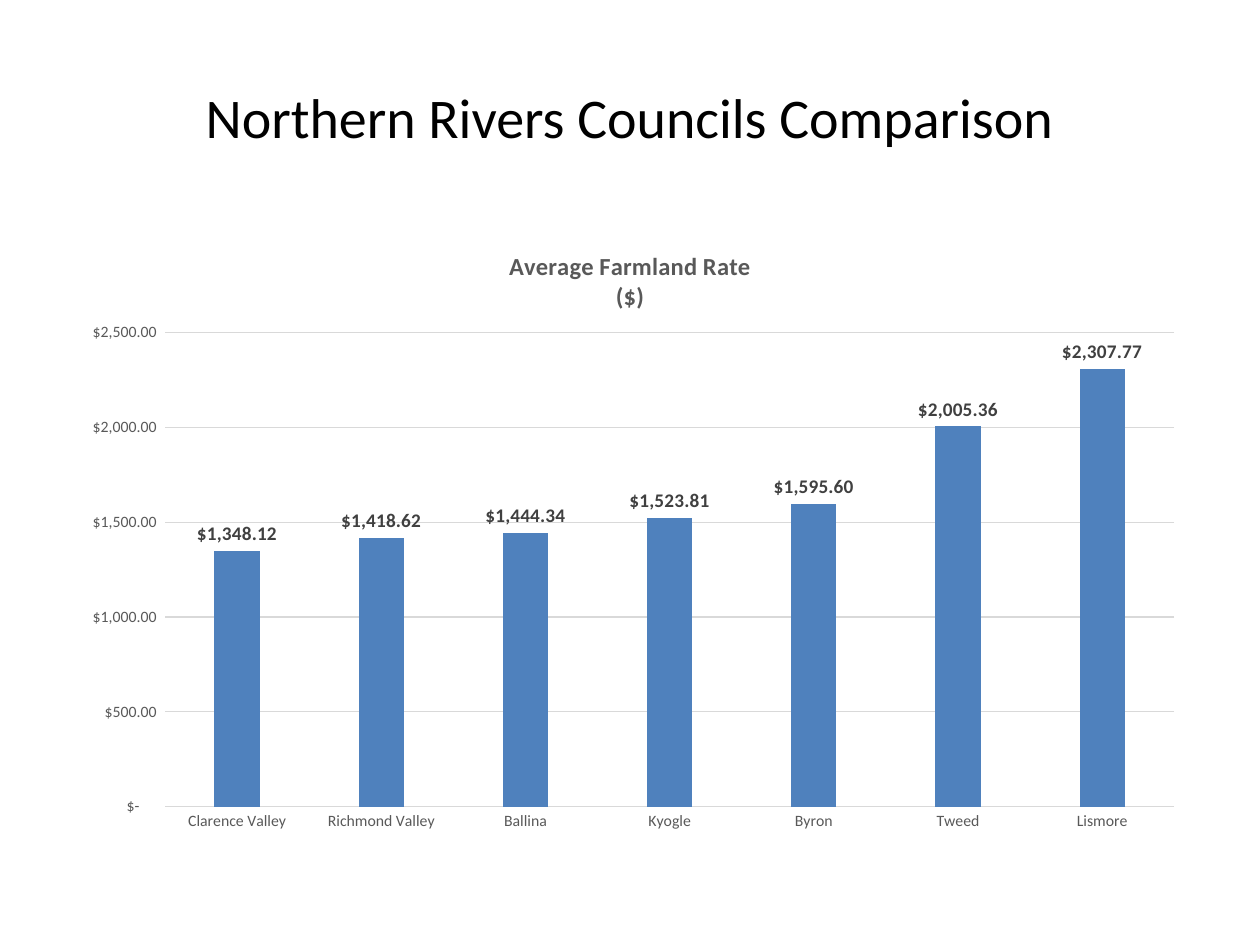
from dataclasses import dataclass

from lxml import etree
from pptx import Presentation
from pptx.chart.data import CategoryChartData
from pptx.dml.color import RGBColor
from pptx.enum.chart import XL_CHART_TYPE, XL_LABEL_POSITION, XL_TICK_MARK
from pptx.enum.text import MSO_ANCHOR, PP_ALIGN
from pptx.oxml.ns import qn
from pptx.util import Pt

COLUMNS = XL_CHART_TYPE.COLUMN_CLUSTERED
OUTSIDE_END = XL_LABEL_POSITION.OUTSIDE_END
NO_TICK = XL_TICK_MARK.NONE
MIDDLE = MSO_ANCHOR.MIDDLE
CENTER = PP_ALIGN.CENTER

ACCOUNTING = r'_("$"* #,##0.00_);_("$"* \(#,##0.00\);_("$"* "-"??_);_(@_)'
AVERAGE_RATES = {
    "Clarence Valley": 1348.12,
    "Richmond Valley": 1418.62,
    "Ballina": 1444.34,
    "Kyogle": 1523.81,
    "Byron": 1595.60,
    "Tweed": 2005.36,
    "Lismore": 2307.77,
}


@dataclass(frozen=True)
class Theme:
    """Typeface, type sizes and colours of the slide."""

    typeface: str = "Calibri"
    heading_size: int = 32
    chart_title_size: int = 14
    label_size: int = 11
    chart_size: int = 10
    axis_size: int = 9
    rule_width: float = 0.75
    black: str = "000000"
    label_ink: str = "404040"
    axis_ink: str = "595959"
    rule: str = "D9D9D9"
    column: str = "4F81BD"


def apply(target, values):
    """Set every attribute named in values on target."""
    for name, value in values.items():
        setattr(target, name, value)


def place(parent, index, **layout):
    """Give a chart part a manual layout in fractions of the chart."""
    for old in parent.findall(qn("c:layout")):
        parent.remove(old)
    holder = etree.Element(qn("c:layout"))
    manual = etree.SubElement(holder, qn("c:manualLayout"))
    for tag, value in layout.items():
        etree.SubElement(manual, qn(f"c:{tag}")).set("val", str(value))
    parent.insert(index, holder)


class SlideBuilder:
    """Hold the theme and current slide and add its elements."""

    def __init__(self, slide, theme):
        """Keep the slide and its theme."""
        self.slide = slide
        self.theme = theme

    def style(self, font, size, color, bold=False):
        """Format a font from the theme."""
        apply(font, {"name": self.theme.typeface, "size": Pt(size), "bold": bold})
        font.color.rgb = RGBColor.from_string(color)

    def rule(self, line):
        """Draw a thin pale line."""
        line.width = Pt(self.theme.rule_width)
        line.color.rgb = RGBColor.from_string(self.theme.rule)

    def heading(self, text, left, top, width, height):
        """Place and format the slide title."""
        heading = self.slide.shapes.title
        apply(heading, {"left": Pt(left), "top": Pt(top),
                        "width": Pt(width), "height": Pt(height)})
        frame = heading.text_frame
        frame.text = text
        apply(frame, {"vertical_anchor": MIDDLE, "word_wrap": True})
        paragraph = frame.paragraphs[0]
        paragraph.alignment = CENTER
        self.style(paragraph.runs[0].font, self.theme.heading_size, self.theme.black)

    def chart_title(self, chart, lines):
        """Write the chart title, one paragraph a line."""
        title = chart.chart_title
        title.text_frame.text = "\n".join(lines)
        for paragraph in title.text_frame.paragraphs:
            paragraph.alignment = CENTER
            self.style(paragraph.runs[0].font, self.theme.chart_title_size,
                       self.theme.axis_ink, True)
        place(title.element, 1, xMode="edge", yMode="edge", x=0.39, y=0.04)

    def axes(self, chart):
        """Format the council and rate axes."""
        councils, rates = chart.category_axis, chart.value_axis
        for axis in (councils, rates):
            apply(axis, {"major_tick_mark": NO_TICK, "minor_tick_mark": NO_TICK})
            self.style(axis.tick_labels.font, self.theme.axis_size, self.theme.axis_ink)
        self.rule(councils.format.line)
        apply(rates, {"minimum_scale": 0, "maximum_scale": 2500, "major_unit": 500,
                      "has_major_gridlines": True})
        self.rule(rates.major_gridlines.format.line)
        rates.format.line.fill.background()
        apply(rates.tick_labels, {"number_format": ACCOUNTING,
                                  "number_format_is_linked": False})

    def column_chart(self, title_lines, rates, left, top, width, height):
        """Add a column chart with value labels."""
        data = CategoryChartData(number_format=ACCOUNTING)
        data.categories = list(rates)
        data.add_series("Series 1", list(rates.values()))
        chart = self.slide.shapes.add_chart(
            COLUMNS, Pt(left), Pt(top), Pt(width), Pt(height), data).chart
        apply(chart, {"has_legend": False, "has_title": True})
        self.style(chart.font, self.theme.chart_size, self.theme.black)
        self.chart_title(chart, title_lines)
        self.axes(chart)

        plot = chart.plots[0]
        apply(plot, {"gap_width": 219, "overlap": -27, "vary_by_categories": False})
        series = plot.series[0]
        series.format.fill.solid()
        series.format.fill.fore_color.rgb = RGBColor.from_string(self.theme.column)
        labels = series.data_labels
        apply(labels, {"show_value": True, "position": OUTSIDE_END,
                       "number_format": ACCOUNTING, "number_format_is_linked": False})
        self.style(labels.font, self.theme.label_size, self.theme.label_ink, True)
        place(chart.element.find(".//" + qn("c:plotArea")), 0, layoutTarget="inner",
              xMode="edge", yMode="edge", x=0.09, y=0.18, w=0.89, h=0.76)


def main():
    """Build and save the council comparison slide."""
    deck = Presentation()
    apply(deck, {"slide_width": Pt(720), "slide_height": Pt(540)})
    title_only = deck.slide_layouts[5]
    builder = SlideBuilder(deck.slides.add_slide(title_only), Theme())
    builder.heading("Northern Rivers Councils Comparison", 36, 21.6, 648, 90)
    builder.column_chart(["Average Farmland Rate", "($)"], AVERAGE_RATES,
                         36, 126, 648, 356.4)
    deck.save("out.pptx")


if __name__ == "__main__":
    main()
